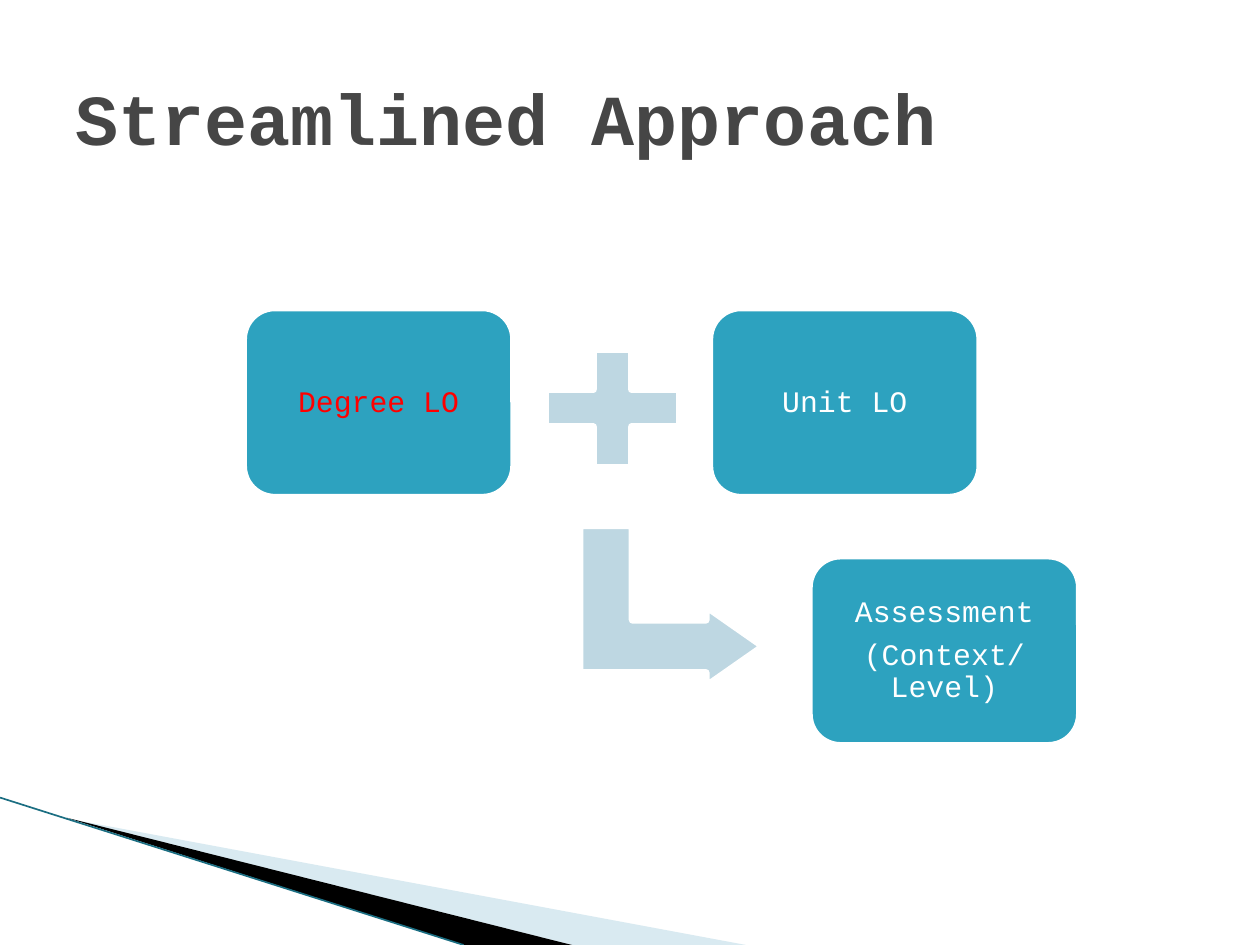
from dataclasses import dataclass
from typing import Any

from lxml import etree
from pptx import Presentation
from pptx.dml.color import RGBColor
from pptx.enum import shapes, text
from pptx.oxml import ns
from pptx import util as u

COLUMNS, ROWS = 100, 75


def color(value):
    """Turn a hex string into a colour."""
    return RGBColor.from_string(value)


def write(frame, lines, size=17, fill="FFFFFF", bold=False, font="Courier New",
          align=text.PP_ALIGN.CENTER, spacing=0.9, after=6):
    """Write one paragraph per line with the given format."""
    frame.word_wrap = True
    frame.vertical_anchor = text.MSO_ANCHOR.MIDDLE
    for index, line in enumerate(lines):
        paragraph = frame.add_paragraph() if index else frame.paragraphs[0]
        paragraph.alignment = align
        paragraph.line_spacing = spacing
        paragraph.space_after = u.Pt(after)
        run = paragraph.add_run()
        run.text = line
        run.font.name, run.font.size, run.font.bold = font, u.Pt(size), bold
        run.font.color.rgb = color(fill)


@dataclass
class Board:
    """Hold the style, the grid and the current slide."""

    slide: Any
    column: float
    row: float
    box_fill: str = "2DA2BF"
    symbol_fill: str = "BED7E2"
    outline: str = "FFFFFF"
    outline_width: float = 4.33

    def place(self, left, top, width, height):
        """Convert grid units to slide lengths."""
        return (round(left * self.column), round(top * self.row),
                round(width * self.column), round(height * self.row))

    def preset(self, kind, area, fill, adjustments=(), rotation=0):
        """Add a filled and outlined preset shape."""
        shape = self.slide.shapes.add_shape(kind, *self.place(*area))
        shape.shadow.inherit = False
        shape.fill.solid()
        shape.fill.fore_color.rgb = color(fill)
        shape.line.color.rgb = color(self.outline)
        shape.line.width = u.Pt(self.outline_width)
        for index, value in enumerate(adjustments):
            shape.adjustments[index] = value
        shape.rotation = rotation
        return shape

    def box(self, left, top, lines, **style):
        """Add a labelled rounded box."""
        shape = self.preset(shapes.MSO_SHAPE.ROUNDED_RECTANGLE,
                            (left, top, 21.5, 15.1), self.box_fill, [0.167])
        frame = shape.text_frame
        frame.margin_left = frame.margin_right = u.Inches(0.07)
        frame.margin_top = frame.margin_bottom = u.Inches(0.07)
        write(frame, lines, **style)

    def symbol(self, kind, left, top, adjustments=()):
        """Add a symbol turned by a quarter."""
        self.preset(kind, (left, top, 12.8, 14.6), self.symbol_fill, adjustments, 90)

    def title(self, line):
        """Add the slide title."""
        shape = self.slide.shapes.add_textbox(*self.place(5, 3, 90, 12.5))
        write(shape.text_frame, [line], size=41, fill="464646", bold=True,
              align=text.PP_ALIGN.LEFT, spacing=1.0, after=0)

    def wedge(self, points, fill, opacity=100):
        """Add a closed outline with a plain fill."""
        start, *rest = [self.place(x, y, 0, 0)[:2] for x, y in points]
        builder = self.slide.shapes.build_freeform(*start)
        builder.add_line_segments(rest, close=True)
        shape = builder.convert_to_shape()
        shape.shadow.inherit = False
        shape.fill.solid()
        shape.fill.fore_color.rgb = color(fill)
        shape.line.fill.background()
        if opacity < 100:
            tint = next(shape.element.iter(ns.qn("a:srgbClr")))
            etree.SubElement(tint, ns.qn("a:alpha"), val=str(opacity * 1000))

    def line(self, start, end, fill, width):
        """Add a straight line."""
        ends = self.place(*start, *end)
        shape = self.slide.shapes.add_connector(shapes.MSO_CONNECTOR.STRAIGHT, *ends)
        shape.line.color.rgb = color(fill)
        shape.line.width = u.Pt(width)
        etree.SubElement(shape.element.spPr, ns.qn("a:effectLst"))


def main():
    """Build the slide and save it."""
    presentation = Presentation()
    presentation.slide_width, presentation.slide_height = u.Inches(10), u.Inches(7.5)
    board = Board(presentation.slides.add_slide(presentation.slide_layouts[6]),
                  presentation.slide_width / COLUMNS, presentation.slide_height / ROWS)

    board.wedge([(5.5, 65), (59.2, 75), (45.4, 75)], "A0CBDC", opacity=40)
    board.wedge([(5.3, 64.9), (45.4, 75), (36.8, 75)], "000000")
    board.line((0, 63.3), (36.8, 75), "1B6E82", 0.95)

    board.title("Streamlined Approach")
    board.symbol(shapes.MSO_SHAPE.MATH_PLUS, 42.2, 25.1)
    board.box(19.3, 24.4, ["Degree LO"], fill="FF0000")
    board.symbol(shapes.MSO_SHAPE.BENT_UP_ARROW, 46.9, 40.8, [0.328, 0.25, 0.358])
    board.box(56.3, 24.4, ["Unit LO"])
    board.box(64.2, 44.1, ["Assessment", "(Context/Level)"])
    presentation.save("out.pptx")


if __name__ == "__main__":
    main()
